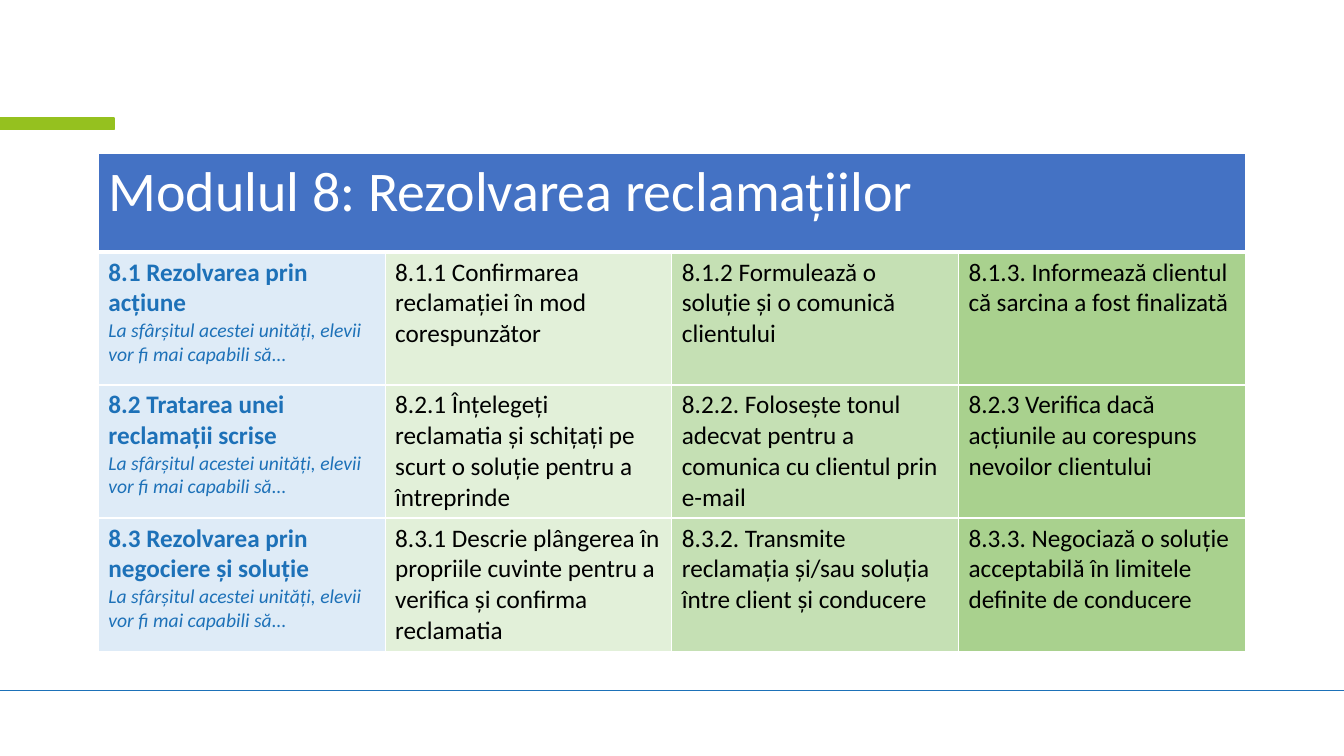
from lxml import etree
from pptx import Presentation
from pptx.dml.color import RGBColor
from pptx.enum.shapes import MSO_CONNECTOR, MSO_SHAPE
from pptx.oxml.ns import qn
from pptx.util import Cm, Pt

RECTANGLE = MSO_SHAPE.RECTANGLE
STRAIGHT = MSO_CONNECTOR.STRAIGHT

FONT = "Calibri"
WHITE, BLACK, BLUE, GREEN = "FFFFFF", "000000", "1D71B8", "95C11F"
HEADER_FILL = "4472C4"
COLUMN_FILLS = ["DEEBF7", "E2F0D9", "C5E0B4", "A9D18E"]

MODULE_TITLE = "Modulul 8: Rezolvarea reclamațiilor"
UNIT_INTRO = "La sfârșitul acestei unități, elevii vor fi mai capabili să..."
UNITS = [
    ["8.1 Rezolvarea prin acțiune",
     "8.1.1 Confirmarea reclamației în mod corespunzător",
     "8.1.2 Formulează o soluție și o comunică clientului",
     "8.1.3. Informează clientul că sarcina a fost finalizată"],
    ["8.2 Tratarea unei reclamații scrise",
     "8.2.1 Înțelegeți reclamatia și schițați pe scurt o soluție pentru a întreprinde",
     "8.2.2. Folosește tonul adecvat pentru a comunica cu clientul prin e-mail",
     "8.2.3 Verifica dacă acțiunile au corespuns nevoilor clientului"],
    ["8.3 Rezolvarea prin negociere și soluție",
     "8.3.1 Descrie plângerea în propriile cuvinte pentru a verifica și confirma reclamatia",
     "8.3.2. Transmite reclamația și/sau soluția între client și conducere",
     "8.3.3. Negociază o soluție acceptabilă în limitele definite de conducere"],
]


def color(hex_value):
    return RGBColor.from_string(hex_value)


def style_paragraph(paragraph, text, size, hex_value, bold=False, italic=False):
    paragraph.text = text
    font = paragraph.font
    font.name, font.size = FONT, Pt(size)
    font.bold, font.italic = bold, italic
    font.color.rgb = color(hex_value)


def style_cell(cell, fill, top=1, bottom=1):
    """Give the cell white borders (top and bottom in points) and a solid fill."""
    properties = cell._tc.get_or_add_tcPr()
    for side, width in (("L", 1), ("R", 1), ("T", top), ("B", bottom)):
        border = etree.SubElement(properties, qn(f"a:ln{side}"), w=str(Pt(width)))
        solid = etree.SubElement(border, qn("a:solidFill"))
        etree.SubElement(solid, qn("a:srgbClr"), val=WHITE)
    cell.fill.solid()
    cell.fill.fore_color.rgb = color(fill)


def add_decoration(slide, left, top, width, height):
    """Place the green accent at the upper left and the rule near the bottom."""
    accent = slide.shapes.add_shape(
        RECTANGLE, left, top + Cm(2.97), Cm(2.87), Cm(0.3))
    accent.shadow.inherit = False
    accent.fill.solid()
    accent.fill.fore_color.rgb = color(GREEN)
    accent.line.color.rgb = color(GREEN)
    accent.line.width = Pt(1)

    rule_y = top + height - Cm(1.65)
    rule = slide.shapes.add_connector(STRAIGHT, left, rule_y, left + width, rule_y)
    rule.line.color.rgb = color(BLUE)
    rule.line.width = Pt(1)
    etree.SubElement(rule._element.spPr, qn("a:effectLst"))


def add_module_table(slide, left, top, width, height):
    column_count = len(COLUMN_FILLS)
    table = slide.shapes.add_table(
        len(UNITS) + 1, column_count, left, top, width, height).table
    header_height = Cm(2.48)
    for column in table.columns:
        column.width = width // column_count
    for row in table.rows:
        row.height = (height - header_height) // len(UNITS)
    table.rows[0].height = header_height

    for column_index in range(column_count):
        style_cell(table.cell(0, column_index), HEADER_FILL, bottom=3)
    header = table.cell(0, 0)
    header.merge(table.cell(0, column_count - 1))
    style_paragraph(header.text_frame.paragraphs[0], MODULE_TITLE, 40, WHITE)

    for row_index, unit in enumerate(UNITS, start=1):
        for column_index, (text, fill) in enumerate(zip(unit, COLUMN_FILLS)):
            cell = table.cell(row_index, column_index)
            style_cell(cell, fill, top=3 if row_index == 1 else 1)
            frame = cell.text_frame
            if column_index == 0:
                style_paragraph(frame.paragraphs[0], text, 18, BLUE, bold=True)
                style_paragraph(frame.add_paragraph(), UNIT_INTRO, 14, BLUE, italic=True)
            else:
                style_paragraph(frame.paragraphs[0], text, 18, BLACK)


def main():
    presentation = Presentation()
    presentation.slide_width, presentation.slide_height = Cm(33.87), Cm(19.05)
    slide = presentation.slides.add_slide(presentation.slide_layouts[6])
    add_decoration(slide, 0, 0, presentation.slide_width, presentation.slide_height)
    add_module_table(slide, Cm(2.48), Cm(3.87), Cm(28.9), Cm(12.53))
    presentation.save("out.pptx")


if __name__ == "__main__":
    main()
